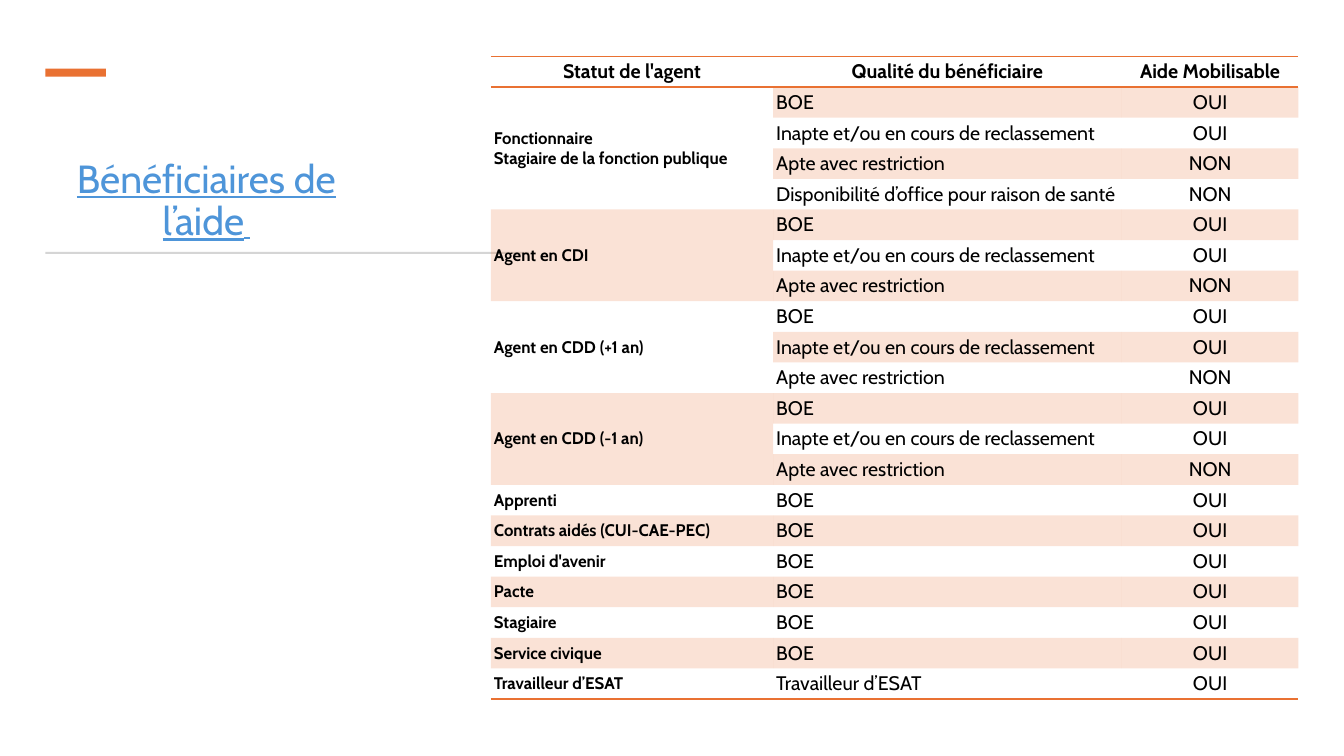
from dataclasses import dataclass

from lxml.etree import SubElement
from pptx import Presentation
from pptx.dml.color import RGBColor
from pptx.enum.shapes import MSO_SHAPE as Shape
from pptx.enum.text import MSO_ANCHOR as Anchor, MSO_AUTO_SIZE as AutoSize, PP_ALIGN as Align
from pptx.oxml import parse_xml
from pptx.oxml.ns import nsdecls, qn
from pptx.util import Emu, Inches, Pt


@dataclass(frozen=True)
class Theme:
    font: str = "Cabin"
    accent: str = "E97132"
    rule: str = "D5D5D5"
    heading: str = "4E95D9"
    ink: str = "000000"
    heading_size: int = 28
    heading_end_size: int = 18
    body_size: int = 14
    status_size: int = 12
    band_opacity: int = 20
    border_width: int = 1
    plain_table: str = "{2D5ABB26-0587-4C30-8999-92F81FD0307C}"


class SlideBuilder:
    """Holds the theme and slide; lengths are percentages of the slide's size."""

    def __init__(self, deck, theme):
        self.theme = theme
        self.width, self.height = deck.slide_width, deck.slide_height
        self.slide = deck.slides.add_slide(deck.slide_layouts[5])

    def across(self, share):
        return Emu(round(self.width * share / 100))

    def down(self, share):
        return Emu(round(self.height * share / 100))

    def box(self, left, top, width, height):
        return self.across(left), self.down(top), self.across(width), self.down(height)

    def run(self, paragraph, text, size, color, bold=False, underline=False):
        run = paragraph.add_run()
        run.text = text
        run.font.name, run.font.size = self.theme.font, Pt(size)
        run.font.bold, run.font.underline = bold, underline
        run.font.color.rgb = RGBColor.from_string(color)

    def bar(self, color, *place):
        bar = self.slide.shapes.add_shape(Shape.RECTANGLE, *self.box(*place))
        bar.shadow.inherit = False
        bar.fill.solid()
        bar.fill.fore_color.rgb = RGBColor.from_string(color)
        bar.line.fill.background()

    def heading(self, runs, *place):
        heading = self.slide.shapes.title
        heading.left, heading.top, heading.width, heading.height = self.box(*place)
        frame = heading.text_frame
        frame.word_wrap, frame.auto_size = True, AutoSize.NONE
        frame.vertical_anchor = Anchor.TOP
        paragraph = frame.paragraphs[0]
        paragraph.alignment, paragraph.line_spacing = Align.CENTER, 0.9
        paragraph.space_before = Pt(10)
        for text, size in runs:
            self.run(paragraph, text, size, self.theme.heading, underline=True)

    def table(self, left, top, columns, row_height, row_count):
        place = self.box(left, top, sum(columns), row_height * row_count)
        frame = self.slide.shapes.add_table(row_count, len(columns), *place)
        table = frame.table
        table.horz_banding = False
        table._tbl.tblPr.find(qn("a:tableStyleId")).text = self.theme.plain_table
        for column, share in zip(table.columns, columns):
            column.width = self.across(share)
        for row in table.rows:
            row.height = self.down(row_height)
        return table

    def cell(self, cell, text, size, align, bold=False, banded=False, borders=()):
        cell.vertical_anchor = Anchor.MIDDLE
        cell.margin_left = cell.margin_right = Inches(0.03)
        cell.margin_top = cell.margin_bottom = 0
        paragraph = cell.text_frame.paragraphs[0]
        paragraph.alignment = align
        for number, line in enumerate(text.split("\n")):
            if number:
                paragraph.add_line_break()
            self.run(paragraph, line, size, self.theme.ink, bold)
        self.band(cell, banded)
        self.borders(cell, borders)

    def band(self, cell, banded):
        if not banded:
            cell.fill.background()
            return
        cell.fill.solid()
        cell.fill.fore_color.rgb = RGBColor.from_string(self.theme.accent)
        color = cell._tc.tcPr.find(f"{qn('a:solidFill')}/{qn('a:srgbClr')}")
        SubElement(color, qn("a:alpha"), val=str(self.theme.band_opacity * 1000))

    def borders(self, cell, sides):
        for position, side in enumerate(sides):
            cell._tc.tcPr.insert(position, parse_xml(
                f'<a:ln{side} {nsdecls("a")} w="{Pt(self.theme.border_width)}">'
                f'<a:solidFill><a:srgbClr val="{self.theme.accent}"/></a:solidFill>'
                f'</a:ln{side}>'))


HEADERS = ("Statut de l'agent", "Qualité du bénéficiaire", "Aide Mobilisable")
BOE = ("BOE", "OUI")
UNFIT = ("Inapte et/ou en cours de reclassement", "OUI")
RESTRICTED = ("Apte avec restriction", "NON")
ON_LEAVE = ("Disponibilité d’office pour raison de santé", "NON")
CIVIL_SERVANT = "Fonctionnaire\nStagiaire de la fonction publique"
CONTRACT = (BOE, UNFIT, RESTRICTED)
STATUSES = (
    (CIVIL_SERVANT, (*CONTRACT, ON_LEAVE)),
    ("Agent en CDI", CONTRACT),
    ("Agent en CDD (+1 an)", CONTRACT),
    ("Agent en CDD (-1 an)", CONTRACT),
    ("Apprenti", (BOE,)),
    ("Contrats aidés (CUI-CAE-PEC)", (BOE,)),
    ("Emploi d'avenir", (BOE,)),
    ("Pacte", (BOE,)),
    ("Stagiaire", (BOE,)),
    ("Service civique", (BOE,)),
    ("Travailleur d’ESAT", (("Travailleur d’ESAT", "OUI"),)),
)


def fill_beneficiaries(page, theme):
    row_count = 1 + sum(len(cases) for _, cases in STATUSES)
    grid = page.table(36.53, 7.47, (21, 25.95, 13.13), 4.05, row_count)

    # Header row
    for column, header in enumerate(HEADERS):
        page.cell(grid.cell(0, column), header, theme.body_size, Align.CENTER,
                  bold=True, borders="TB")

    # One merged status cell per group, odd rows banded
    row = 1
    for status, cases in STATUSES:
        first = grid.cell(row, 0)
        if len(cases) > 1:
            first.merge(grid.cell(row + len(cases) - 1, 0))
        page.cell(first, status, theme.status_size, Align.LEFT, bold=True,
                  banded=row % 2 == 1 and status != CIVIL_SERVANT,
                  borders="B" if row == row_count - 1 else "")
        for quality, aid in cases:
            for column, text, align in ((1, quality, Align.JUSTIFY), (2, aid, Align.CENTER)):
                page.cell(grid.cell(row, column), text, theme.body_size, align,
                          banded=row % 2 == 1,
                          borders="B" if row == row_count - 1 else "")
            row += 1


def main():
    deck = Presentation()
    deck.slide_width, deck.slide_height = Inches(13.33), Inches(7.5)
    theme = Theme()
    page = SlideBuilder(deck, theme)

    # Accent bar and rule around the heading
    page.bar(theme.accent, 3.38, 9.07, 4.5, 1.07)
    page.bar(theme.rule, 3.38, 33.33, 36, 0.27)

    # Heading
    page.heading((("Bénéficiaires de l’aide", theme.heading_size),
                  (" ", theme.heading_end_size)), 3.38, 20.4, 23.93, 28.53)

    # Table of beneficiaries
    fill_beneficiaries(page, theme)
    deck.save("out.pptx")


if __name__ == "__main__":
    main()
